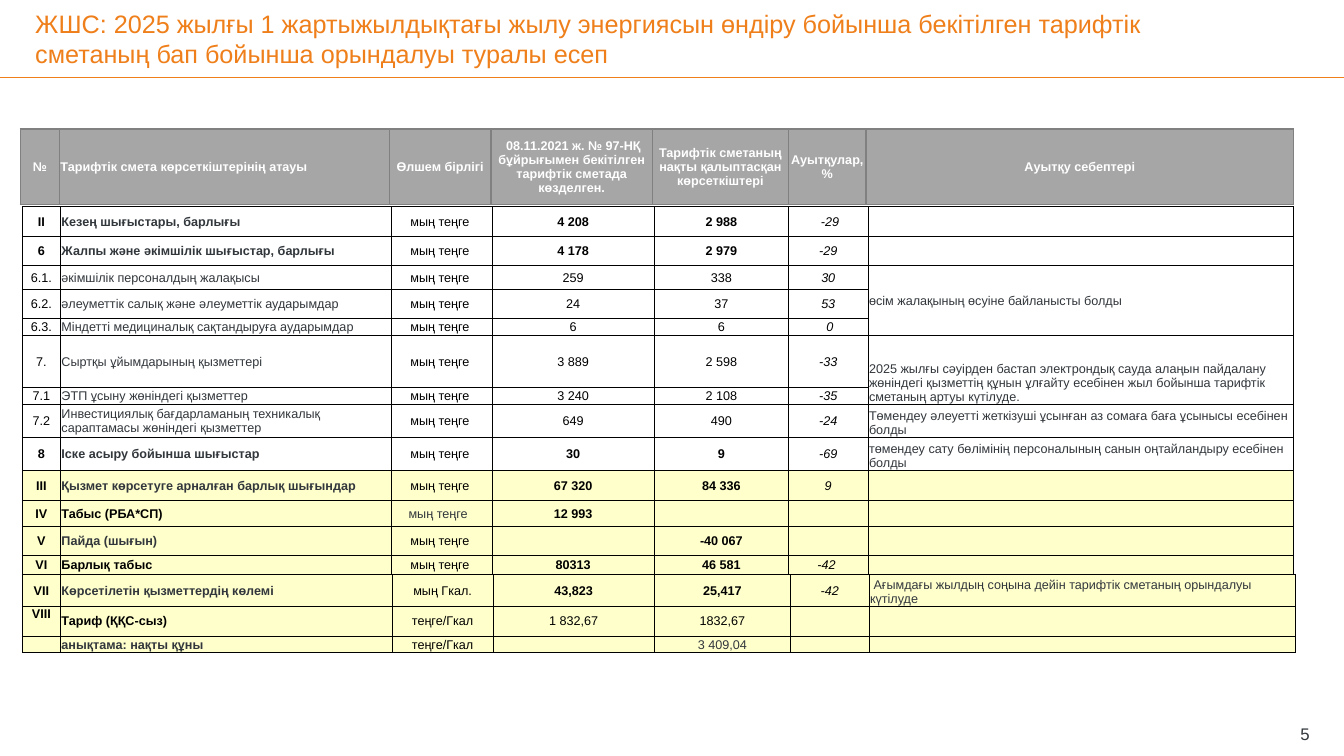
from lxml import etree
from pptx import Presentation
from pptx.dml.color import RGBColor as RGB
from pptx.enum.shapes import MSO_CONNECTOR as Connector
from pptx.enum.text import MSO_ANCHOR as Anchor, PP_ALIGN as Align
from pptx.oxml.ns import qn
from pptx.util import Inches, Pt

COLORS = {
    "orange": "EF7F1A", "ink": "32373C", "black": "000000", "white": "FFFFFF",
    "header": "A6A6A6", "header_edge": "808080", "total": "FFFFCC",
}
WIDTH, HEIGHT = 13.33, 7.5
UNIT = "мың теңге "

HEADER = [
    (0.75, "№", "Тарифтік смета көрсеткіштерінің атауы", "Өлшем бірлігі",
     " 08.11.2021 ж. № 97-НҚ бұйрығымен бекітілген тарифтік сметада көзделген.",
     "Тарифтік сметаның нақты қалыптасқан көрсеткіштері", "Ауытқулар, %", "Ауытқу себептері"),
]
# Row height, then the seven columns
COSTS = [
    (0.29, "II", "Кезең шығыстары, барлығы", UNIT, "4 208", "2 988", " -29", ""),
    (0.29, "6", "Жалпы және әкімшілік шығыстар, барлығы", UNIT, "4 178", "2 979", "-29", ""),
    (0.24, "6.1.", "әкімшілік персоналдың жалақысы", UNIT, "259", "338", "30",
     "өсім жалақының өсуіне байланысты болды"),
    (0.29, "6.2.", "әлеуметтік салық және әлеуметтік аударымдар", UNIT, "24", "37", "53", ""),
    (0.17, "6.3.", "Міндетті медициналық сақтандыруға аударымдар", UNIT, "6", "6", " 0", ""),
    (0.51, "7.", "Сыртқы ұйымдарының қызметтері", UNIT, "3 889", "2 598", "-33",
     "2025 жылғы сәуірден бастап электрондық сауда алаңын пайдалану жөніндегі қызметтің "
     "құнын ұлғайту есебінен жыл бойынша тарифтік сметаның артуы күтілуде."),
    (0.17, "7.1", "ЭТП ұсыну жөніндегі қызметтер", UNIT, "3 240", "2 108", "-35", ""),
    (0.33, "7.2", "Инвестициялық бағдарламаның техникалық сараптамасы жөніндегі қызметтер",
     UNIT, "649", "490", "-24",
     "Төмендеу әлеуетті жеткізуші ұсынған аз сомаға баға ұсынысы есебінен болды"),
    (0.33, "8", "Іске асыру бойынша шығыстар", UNIT, "30", "9", "-69",
     "төмендеу сату бөлімінің персоналының санын оңтайландыру есебінен болды"),
    (0.3, "III", "Қызмет көрсетуге арналған барлық шығындар", UNIT, "67 320", "84 336", "9", ""),
    (0.25, "IV", "Табыс (РБА*СП)", "мың теңге  ", "12 993", "", "", ""),
    (0.29, "V", "Пайда (шығын)", UNIT, "", "-40 067", "", ""),
    (0.19, "VI", "Барлық табыс", UNIT, "80313", "46 581", "-42 ", ""),
]
RESULTS = [
    (0.22, "VII", "Көрсетілетін қызметтердің көлемі", "мың Гкал.", "43,823", "25,417", "-42",
     " Ағымдағы жылдың соңына дейін тарифтік сметаның орындалуы күтілуде"),
    (0.3, "VIII", "Тариф (ҚҚС-сыз)", "теңге/Гкал", "1 832,67", "1832,67", "", ""),
    (0.15, "", "анықтама: нақты құны", "теңге/Гкал", "", "3 409,04", "", ""),
]
BLACK_NAMES = {"Табыс (РБА*СП)", "Барлық табыс", "Тариф (ҚҚС-сыз)"}
INK_VALUES = {"мың теңге  ", "3 409,04"}


def write(frame, text, size=9, color="black", bold=False, italic=False, align=Align.LEFT):
    para = frame.paragraphs[0]
    para.alignment = align
    if not text:
        # The end mark sets the height of an empty line
        para._p.get_or_add_endParaRPr().set("sz", str(size * 100))
        return
    span = para.add_run()
    span.text = text
    font = span.font
    font.name, font.size, font.bold, font.italic = "Arial", Pt(size), bold, italic
    font.color.rgb = RGB.from_string(COLORS[color])


def add_edges(cell, color, points):
    properties = cell._tc.get_or_add_tcPr()
    for side in ("a:lnL", "a:lnR", "a:lnT", "a:lnB"):
        edge = etree.SubElement(properties, qn(side), w=str(Pt(points)))
        fill = etree.SubElement(edge, qn("a:solidFill"))
        etree.SubElement(fill, qn("a:srgbClr"), val=COLORS[color])


deck = Presentation()
deck.slide_width, deck.slide_height = Inches(WIDTH), Inches(HEIGHT)
page = deck.slides.add_slide(deck.slide_layouts[6])

rule = page.shapes.add_connector(
    Connector.STRAIGHT, 0, Inches(0.77), Inches(WIDTH), Inches(0.77))
rule.line.color.rgb = RGB.from_string(COLORS["orange"])
rule.line.width = Pt(0.75)
etree.SubElement(rule._element.spPr, qn("a:effectLst"))

labels = [
    ((0.35, 0, 11.57, 0.77),
     "ЖШС: 2025 жылғы 1 жартыжылдықтағы жылу энергиясын өндіру бойынша бекітілген "
     "тарифтік сметаның бап бойынша орындалуы туралы есеп",
     dict(size=18, color="orange")),
    ((12.49, 7.15, 0.5, 0.25), "5", dict(size=12, color="ink", align=Align.RIGHT)),
]
for place, text, style in labels:
    box = page.shapes.add_textbox(*map(Inches, place))
    frame = box.text_frame
    frame.word_wrap = True
    frame.vertical_anchor = Anchor.MIDDLE
    frame.margin_left = frame.margin_right = frame.margin_top = frame.margin_bottom = 0
    write(frame, text, **style)

tables = [
    (0.22, 2.05, COSTS, [0.38, 3.28, 1, 1.61, 1.33, 0.79, 4.22]),
    (0.2, 1.28, HEADER, [0.39, 3.27, 1.01, 1.6, 1.35, 0.77, 4.24]),
    (0.22, 5.7, RESULTS, [0.38, 3.29, 1, 1.6, 1.35, 0.78, 4.23]),
]
for left, top, rows, widths in tables:
    is_header = rows is HEADER
    height = sum(row[0] for row in rows)
    grid = page.shapes.add_table(len(rows), len(widths), Inches(left), Inches(top),
                                 Inches(sum(widths)), Inches(height)).table
    grid.first_row = grid.horz_banding = False
    for column, width in zip(grid.columns, widths):
        column.width = Inches(width)
    for r, (row_height, *texts) in enumerate(rows):
        grid.rows[r].height = Inches(row_height)
        number, name = texts[:2]
        is_total = rows is RESULTS or number in {"III", "IV", "V", "VI"}
        is_bold = is_total or number in {"II", "6", "8"}
        plain_values = number in {"VIII", ""}
        for c, text in enumerate(texts):
            cell = grid.cell(r, c)
            cell.margin_left = cell.margin_right = cell.margin_top = Inches(0.01)
            cell.margin_bottom = 0
            cell.vertical_anchor = Anchor.MIDDLE
            if c == 6 and not is_header and number != "6.1.":
                cell.vertical_anchor = Anchor.BOTTOM
            elif text == "VIII":
                cell.vertical_anchor = Anchor.TOP
            if is_header:
                add_edges(cell, "header_edge", 1)
            else:
                add_edges(cell, "black", 0.5)
            if is_header or is_total:
                cell.fill.solid()
                shade = "header" if is_header else "total"
                cell.fill.fore_color.rgb = RGB.from_string(COLORS[shade])
            else:
                cell.fill.background()

            color = "black"
            if is_header:
                color = "white"
            elif c == 6 or text in INK_VALUES or (c == 1 and name not in BLACK_NAMES):
                color = "ink"
            bold = is_header or (is_bold and (c < 2 or c in (3, 4) and not plain_values))
            starts_left = c == 1 or (c == 6 and not is_header)
            write(cell.text_frame, text, color=color, bold=bold,
                  italic=c == 5 and not is_header,
                  align=Align.LEFT if starts_left else Align.CENTER)
    if rows is COSTS:
        for first, last in ((2, 4), (5, 6)):
            grid.cell(first, 6).merge(grid.cell(last, 6))

deck.save("out.pptx")
